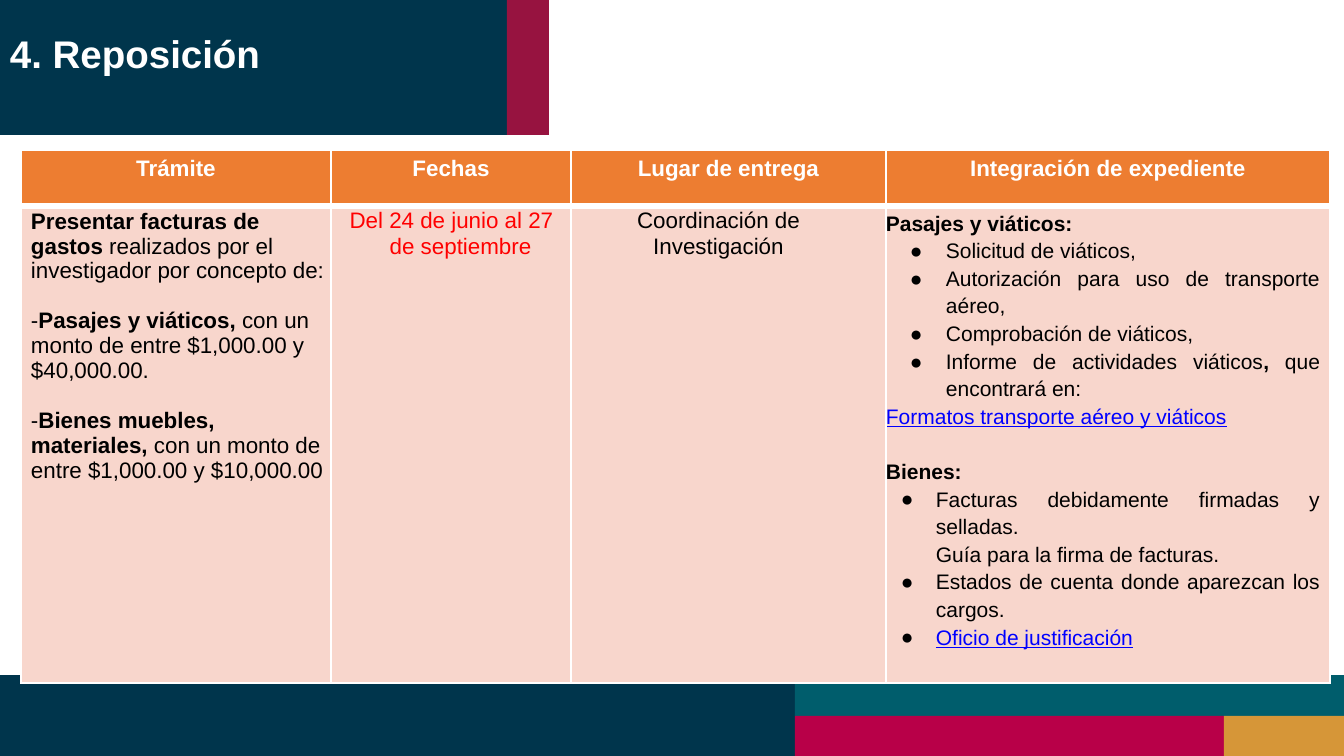
from dataclasses import dataclass

from lxml.etree import SubElement
from pptx import Presentation
from pptx.dml.color import RGBColor
from pptx.enum.shapes import MSO_SHAPE
from pptx.enum.text import PP_ALIGN as Align
from pptx.oxml.ns import qn
from pptx.util import Pt

PX = 914400 / 100.8


@dataclass(frozen=True)
class Theme:
    font: str = "Arial"
    white: str = "FFFFFF"
    black: str = "000000"
    red: str = "FF0000"
    link: str = "0000FF"
    navy: str = "00354C"
    teal: str = "005D6C"
    wine: str = "971340"
    magenta: str = "B80048"
    gold: str = "D69638"
    header: str = "ED7D31"
    body: str = "F8D6CC"
    title_size: float = 27.5
    table_size: float = 16
    list_size: float = 15
    thin: float = 1.5
    thick: float = 4.25


THEME = Theme()

# left, top, width, height in px
BANDS = [
    ((0, 0, 507, 135), THEME.navy),
    ((507, 0, 42, 135), THEME.wine),
    ((0, 675, 795, 81), THEME.navy),
    ((795, 675, 549, 41), THEME.teal),
    ((795, 716, 429, 40), THEME.magenta),
    ((1224, 716, 120, 40), THEME.gold),
]
TITLE = "4. Reposición"
TITLE_BOX = (9, 29, 507, 48)
TABLE_AT = (21, 150)
COLUMNS = [310, 240, 315, 444]
ROWS = [56, 476]
HEADINGS = ["Trámite", "Fechas", "Lugar de entrega", "Integración de expediente"]

# Text between asterisks is bold
PROCEDURE = [
    "*Presentar facturas de gastos* realizados por el investigador por concepto de:",
    "-*Pasajes y viáticos,* con un monto de entre $1,000.00 y $40,000.00.",
    "-*Bienes muebles, materiales,* con un monto de entre $1,000.00 y $10,000.00",
]
DATES = "Del 24 de junio al 27 de septiembre"
PLACE = "Coordinación de\vInvestigación"
# kind of line, text
FILE_CONTENTS = [
    ("head", "*Pasajes y viáticos:*"),
    ("travel", "Solicitud de viáticos,"),
    ("travel", "Autorización para uso de transporte aéreo,"),
    ("travel", "Comprobación de viáticos,"),
    ("travel", "Informe de actividades viáticos*,* que encontrará en:"),
    ("link", "Formatos transporte aéreo y viáticos"),
    ("head", "*Bienes:*"),
    ("goods", "Facturas debidamente firmadas y selladas."),
    ("goods note", "Guía para la firma de facturas."),
    ("goods", "Estados de cuenta donde aparezcan los cargos."),
    ("goods link", "Oficio de justificación"),
]
# left margin and first-line indent in px
INDENTS = {"travel": (60, -36), "goods": (50, -35), "goods note": (50, 0),
           "goods link": (50, -35)}


def emu(px):
    return round(px * PX)


def rgb(color):
    return RGBColor.from_string(color)


def write(frame, text, size, color, align=Align.LEFT, spacing=1.0, before=0,
          indent=(0, 0), bullet=False, bold=False, underline=False):
    """Fill the empty first paragraph of the frame, or append one."""
    first = frame.paragraphs[0]
    para = first if not first.runs else frame.add_paragraph()
    para.alignment = align
    para.line_spacing = spacing
    if para is not first:
        para.space_before = Pt(before)
    props = para._p.get_or_add_pPr()
    props.set("marL", str(emu(indent[0])))
    props.set("indent", str(emu(indent[1])))
    if bullet:
        SubElement(SubElement(props, qn("a:buClr")), qn("a:srgbClr"), val=THEME.black)
        SubElement(props, qn("a:buFont"), typeface=THEME.font)
        SubElement(props, qn("a:buChar"), char="●")
    else:
        SubElement(props, qn("a:buNone"))
    font = para.font
    font.name, font.size = THEME.font, Pt(size)
    font.color.rgb = rgb(color)
    font.underline = underline
    pieces = text.split("*")
    if len(pieces) == 1:
        font.bold = bold
    for position, piece in enumerate(pieces):
        for part, line in enumerate(piece.split("\v")):
            if part:
                para.add_line_break()
            if line:
                run = para.add_run()
                run.text = line
                if len(pieces) > 1:
                    run.font.bold = position % 2 == 1


def style_cell(cell, fill, top, bottom, inset=0, right=0):
    cell.margin_left = cell.margin_bottom = 0
    cell.margin_top, cell.margin_right = emu(inset), emu(right)
    props = cell._tc.get_or_add_tcPr()
    widths = {"a:lnL": THEME.thin, "a:lnR": THEME.thin, "a:lnT": top, "a:lnB": bottom}
    for side, width in widths.items():
        border = SubElement(props, qn(side), w=str(Pt(width)))
        SubElement(SubElement(border, qn("a:solidFill")), qn("a:srgbClr"), val=THEME.white)
    cell.fill.solid()
    cell.fill.fore_color.rgb = rgb(fill)


def add_bands(slide):
    for box, color in BANDS:
        band = slide.shapes.add_shape(MSO_SHAPE.RECTANGLE, *map(emu, box))
        band.shadow.inherit = False
        band.fill.solid()
        band.fill.fore_color.rgb = rgb(color)
        band.line.fill.background()


def add_title(slide):
    frame = slide.shapes.add_textbox(*map(emu, TITLE_BOX)).text_frame
    frame.word_wrap = True
    frame.margin_left = frame.margin_right = frame.margin_bottom = 0
    frame.margin_top = emu(1)
    write(frame, TITLE, THEME.title_size, THEME.white, indent=(1, 0), bold=True)


def add_procedures(slide):
    size = (sum(COLUMNS), sum(ROWS))
    table = slide.shapes.add_table(len(ROWS), len(COLUMNS),
                                   *map(emu, TABLE_AT + size)).table
    for column, width in zip(table.columns, COLUMNS):
        column.width = emu(width)
    for row, height in zip(table.rows, ROWS):
        row.height = emu(height)

    for index, heading in enumerate(HEADINGS):
        cell = table.cell(0, index)
        style_cell(cell, THEME.header, THEME.thin, THEME.thick)
        write(cell.text_frame, heading, THEME.table_size, THEME.white,
              Align.CENTER, 1.27, bold=True)

    frames = []
    for index, (inset, right) in enumerate([(3, 5), (1, 10), (1, 20), (2, 10)]):
        cell = table.cell(1, index)
        style_cell(cell, THEME.body, THEME.thick, THEME.thin, inset, right)
        frames.append(cell.text_frame)
    procedure, dates, place, contents = frames

    for text in PROCEDURE:
        write(procedure, text, THEME.table_size, THEME.black, before=18, indent=(10, 0))
    write(dates, DATES, THEME.table_size, THEME.red, Align.CENTER, 1.04, indent=(29, -18))
    write(place, PLACE, THEME.table_size, THEME.black, Align.CENTER, 1.04)
    for kind, text in FILE_CONTENTS:
        is_link = kind.endswith("link")
        write(contents, text, THEME.list_size, THEME.link if is_link else THEME.black,
              Align.JUSTIFY, 1.18, before=19.6 if kind == "head" else 0.1,
              indent=INDENTS.get(kind, (0, 0)),
              bullet=kind in ("travel", "goods", "goods link"), underline=is_link)


def main():
    deck = Presentation()
    deck.slide_width, deck.slide_height = emu(1344), emu(756)
    slide = deck.slides.add_slide(deck.slide_layouts[6])
    add_bands(slide)
    add_title(slide)
    add_procedures(slide)
    deck.save("out.pptx")


if __name__ == "__main__":
    main()
